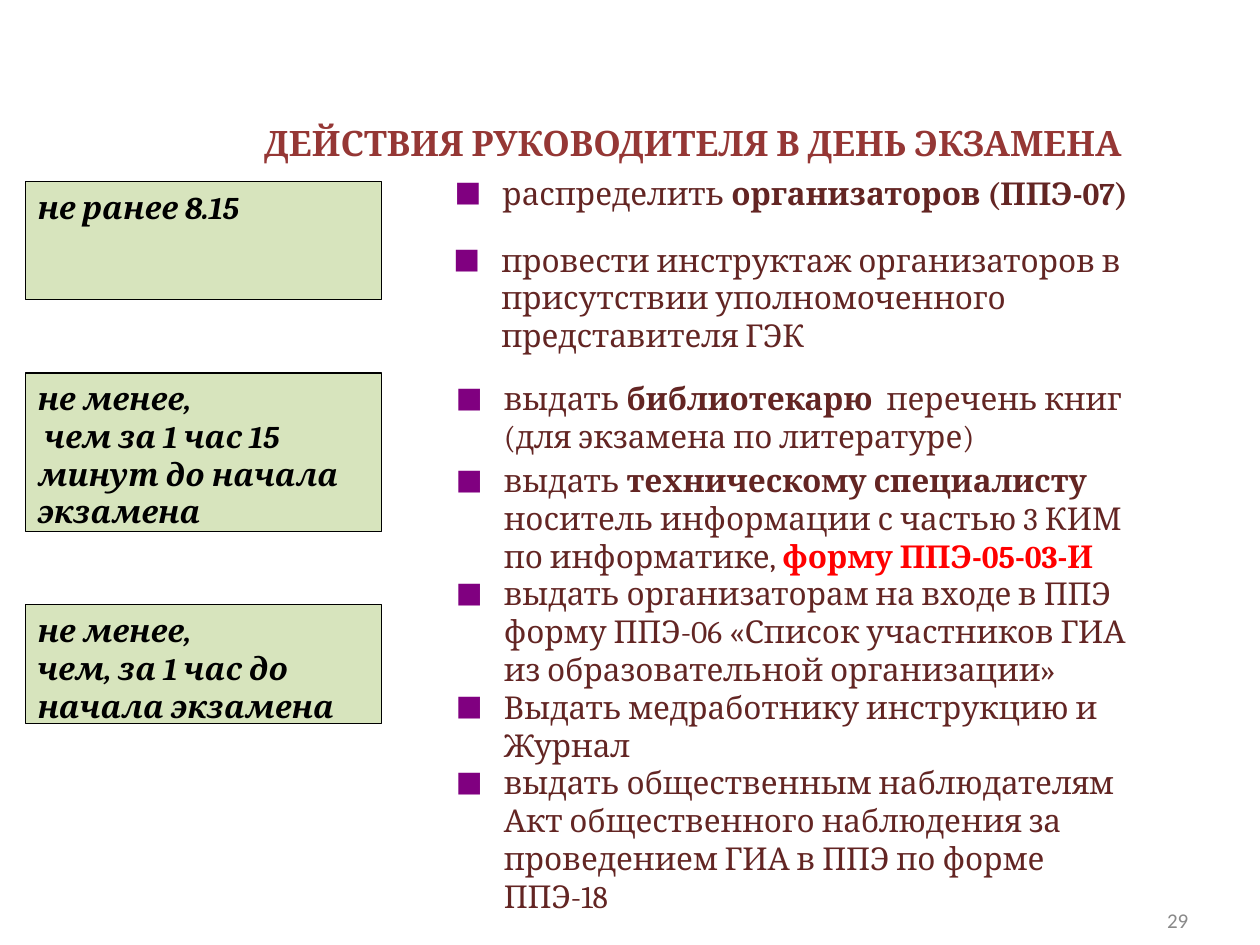
from lxml import etree
from pptx import Presentation
from pptx.dml.color import RGBColor
from pptx.enum.shapes import MSO_SHAPE
from pptx.enum.text import MSO_ANCHOR, MSO_AUTO_SIZE, PP_ALIGN
from pptx.oxml.ns import qn
from pptx.util import Inches, Pt

RECT = MSO_SHAPE.RECTANGLE
TOP, MIDDLE = MSO_ANCHOR.TOP, MSO_ANCHOR.MIDDLE
LEFT, CENTER, RIGHT = PP_ALIGN.LEFT, PP_ALIGN.CENTER, PP_ALIGN.RIGHT
FIXED = MSO_AUTO_SIZE.NONE

BLACK = RGBColor(0x00, 0x00, 0x00)
GREEN = RGBColor(0xD7, 0xE4, 0xBD)
WINE = RGBColor(0x95, 0x37, 0x35)
BROWN = RGBColor(0x63, 0x25, 0x23)
RED = RGBColor(0xFF, 0x00, 0x00)
GRAY = RGBColor(0x89, 0x89, 0x89)
PURPLE = "800080"

TIMES = [
    (1.44, 0.94, ["не ранее 8.15"]),
    (2.96, 1.26, ["не менее,", " чем за 1 час 15 минут до начала экзамена"]),
    (4.8, 0.94, ["не менее,", "чем, за 1 час до начала экзамена"]),
]
TASKS = [
    ((3.51, 1.33, 6.33, 0.53), [
        (0, [("распределить ",), ("организаторов (ППЭ-07)", True)]),
    ]),
    ((3.5, 1.86, 5.92, 0.95), [
        (0, [("провести инструктаж организаторов в присутствии "
              "уполномоченного представителя ГЭК",)]),
    ]),
    ((3.52, 2.96, 5.59, 1.56), [
        (0, [("выдать ",), ("библиотекарю  ", True),
             ("перечень книг (для экзамена по литературе)",)]),
        (3.6, [("выдать ",), ("техническому специалисту", True),
               (" носитель информации с частью 3 КИМ по информатике, ",),
               ("форму ППЭ-05-03-И", True, RED)]),
        (0, [("выдать организаторам на входе в ППЭ форму ППЭ-06 "
              "«Список участников ГИА из образовательной организации»",)]),
        (0, [("Выдать медработнику инструкцию и Журнал",)]),
        (0, [("выдать общественным наблюдателям Акт общественного "
              "наблюдения за проведением ГИА в ППЭ по форме ППЭ-18",)]),
    ]),
]


class Deck:
    """Holds the style and the current slide, and adds elements to it."""

    def __init__(self):
        self.face = "Cambria"
        self.size = 18
        self.prs = Presentation()
        self.prs.slide_width, self.prs.slide_height = Inches(10), Inches(7.5)
        self.slide = self.prs.slides.add_slide(self.prs.slide_layouts[5])

    def style(self, font, color, size=None, bold=False, italic=False, face=None):
        font.name = face or self.face
        font.size = Pt(size or self.size)
        font.bold, font.italic = bold, italic
        font.color.rgb = color

    def setup(self, frame, anchor=TOP):
        frame.word_wrap = True
        frame.auto_size = FIXED
        frame.vertical_anchor = anchor

    def title(self, text, box):
        shape = self.slide.shapes.title
        shape.left, shape.top, shape.width, shape.height = map(Inches, box)
        frame = shape.text_frame
        frame.text = text
        self.setup(frame, MIDDLE)
        para = frame.paragraphs[0]
        para.alignment = CENTER
        self.style(para.runs[0].font, WINE, 20, True)

    def panel(self, box, lines):
        shape = self.slide.shapes.add_shape(RECT, *map(Inches, box))
        shape.shadow.inherit = False
        shape.fill.solid()
        shape.fill.fore_color.rgb = GREEN
        shape.line.color.rgb = BLACK
        shape.line.width = Pt(0.75)
        frame = shape.text_frame
        frame.text = "\n".join(lines)
        self.setup(frame)
        for para in frame.paragraphs:
            para.alignment = LEFT
            self.style(para.runs[0].font, BLACK, bold=True, italic=True)

    def bullet(self, para):
        props = para._p.get_or_add_pPr()
        props.set("marL", str(Inches(0.38)))
        props.set("indent", str(-Inches(0.38)))
        tint = etree.SubElement(props, qn("a:buClr"))
        etree.SubElement(tint, qn("a:srgbClr"), val=PURPLE)
        etree.SubElement(props, qn("a:buSzPct"), val="90000")
        etree.SubElement(props, qn("a:buFont"), typeface=self.face)
        etree.SubElement(props, qn("a:buChar"), char="■")

    def tasks(self, box, items):
        frame = self.slide.shapes.add_textbox(*map(Inches, box)).text_frame
        self.setup(frame)
        for i, (gap, parts) in enumerate(items):
            para = frame.add_paragraph() if i else frame.paragraphs[0]
            self.bullet(para)
            para.space_before = Pt(gap)
            for text, bold, color in (p + (False, BROWN)[len(p) - 1:] for p in parts):
                run = para.add_run()
                run.text = text
                self.style(run.font, color, bold=bold)

    def number(self, text, box):
        frame = self.slide.shapes.add_textbox(*map(Inches, box)).text_frame
        frame.text = text
        self.setup(frame, MIDDLE)
        para = frame.paragraphs[0]
        para.alignment = RIGHT
        self.style(para.runs[0].font, GRAY, 12, face="Calibri")


def main():
    deck = Deck()
    deck.title("ДЕЙСТВИЯ РУКОВОДИТЕЛЯ В ДЕНЬ ЭКЗАМЕНА", (1, 0.7, 9, 0.86))
    for top, height, lines in TIMES:
        deck.panel((0.2, top, 2.83, height), lines)
    for box, items in TASKS:
        deck.tasks(box, items)
    deck.number("29", (7.2, 7.1, 2.33, 0.4))
    deck.prs.save("out.pptx")


if __name__ == "__main__":
    main()
